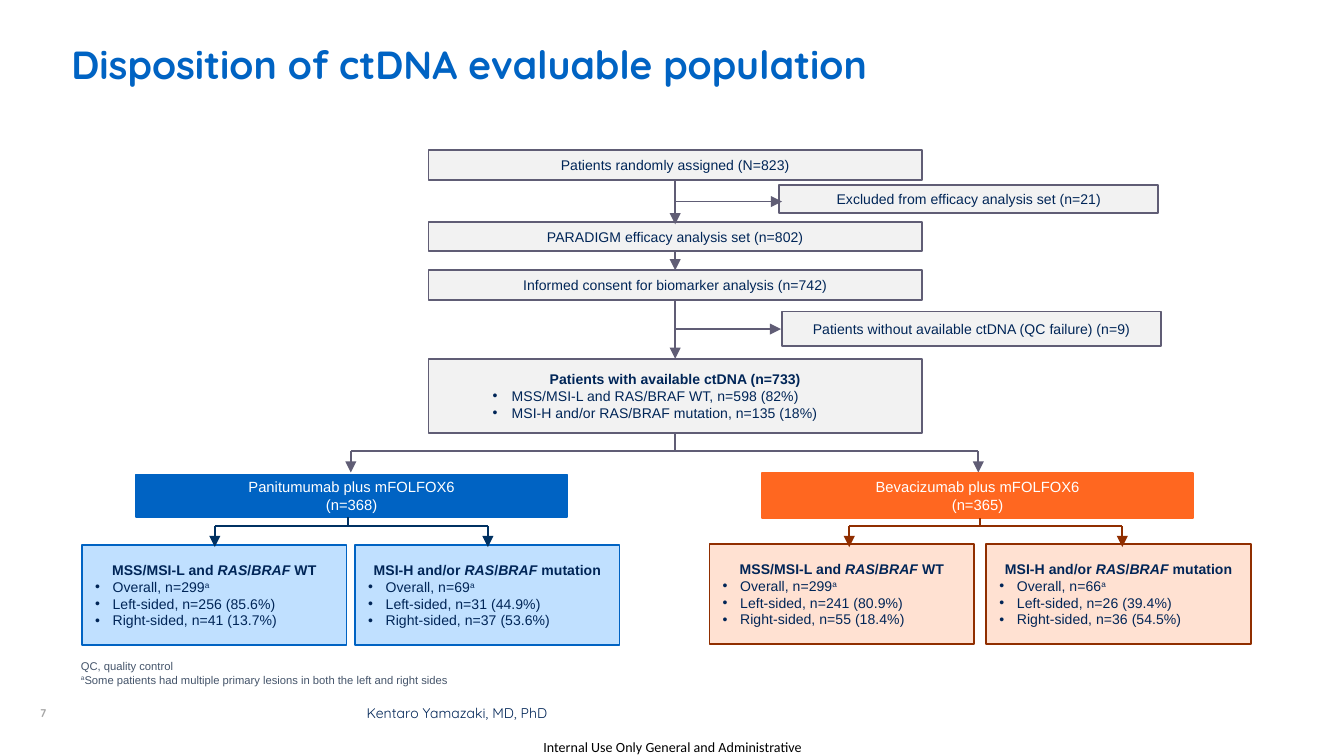
"""Build the patient disposition flow chart slide."""
from lxml import etree
from pptx import Presentation, util as u
from pptx.dml.color import RGBColor
from pptx.enum import shapes, text
from pptx.oxml.ns import qn

THEME = dict(
    head="Quicksand", body="Arial", foot="Calibri",
    title_size=21, text_size=7.5, arm_size=7.9, note_size=6,
    blue="0063C3", navy="002557", grey="605D75", pale="F2F2F2", white="FFFFFF",
    black="000000", note="44546A", number="A6A6A6",
    blue_pale="C0E0FF", blue_dark="003162",
    orange="FF6720", orange_pale="FFE1D2", orange_dark="902E00",
)
C, L = text.PP_ALIGN.CENTER, text.PP_ALIGN.LEFT
TOP, MID, BOTTOM = text.MSO_ANCHOR.TOP, text.MSO_ANCHOR.MIDDLE, text.MSO_ANCHOR.BOTTOM

TITLE = "Disposition of ctDNA evaluable population"
AUTHOR = "Kentaro Yamazaki, MD, PhD"
NOTES = ["QC, quality control",
         "^a^Some patients had multiple primary lesions in both the left and right sides"]
STEPS = [
    ("Patients randomly assigned (N=823)", (8.1, 2.84, 9.32, 0.56)),
    ("PARADIGM efficacy analysis set (n=802)", (8.1, 4.19, 9.32, 0.56)),
    ("Informed consent for biomarker analysis (n=742)", (8.1, 5.11, 9.32, 0.56)),
    ("Excluded from efficacy analysis set (n=21)", (14.73, 3.5, 7.16, 0.53)),
    ("Patients without available ctDNA (QC failure) (n=9)", (14.78, 5.89, 7.16, 0.66)),
]
AVAILABLE = ("Patients with available ctDNA (n=733)",
             ["MSS/MSI-L and RAS/BRAF WT, n=598 (82%)",
              "MSI-H and/or RAS/BRAF mutation, n=135 (18%)"])
AVAILABLE_AT = (8.1, 6.78, 9.32, 1.4)
CENTRE = 12.76
DOWN = [(3.42, 4.24), (4.77, 5.11), (5.67, 6.78)]
ACROSS = [(3.81, 14.78), (6.22, 14.76)]
GROUPS = ["MSS/MSI-L and *RAS*/*BRAF* WT", "MSI-H and/or *RAS*/*BRAF* mutation"]
ARMS = [
    dict(name="Panitumumab plus mFOLFOX6", n="(n=368)", at=(2.57, 8.97, 8.15, 0.81),
         colour="blue", pale="blue_pale", edge="blue", line="blue_dark",
         stem=6.58, drops=(4.06, 9.22), top=10.31, lefts=(1.55, 6.71),
         counts=[("299", "256 (85.6%)", "41 (13.7%)"), ("69", "31 (44.9%)", "37 (53.6%)")]),
    dict(name="Bevacizumab plus mFOLFOX6", n="(n=365)", at=(14.4, 8.94, 8.15, 0.86),
         colour="orange", pale="orange_pale", edge="orange_dark", line="orange_dark",
         stem=18.52, drops=(16.05, 21.21), top=10.29, lefts=(13.41, 18.64),
         counts=[("299", "241 (80.9%)", "55 (18.4%)"), ("66", "26 (39.4%)", "36 (54.5%)")]),
]


def rgb(key):
    return RGBColor.from_string(THEME[key])


def place(sp, at):
    sp.left, sp.top, sp.width, sp.height = map(u.Cm, at)


def write(tf, lines, size="text_size", colour="navy", font="body", bold=False, align=L,
          anchor=MID, inset=(0.25, 0.13), indent=None, spacing=None, add=False):
    """Write lines, where *x* is italic and ^x^ is superscript."""
    tf.word_wrap, tf.vertical_anchor, tf.auto_size = True, anchor, text.MSO_AUTO_SIZE.NONE
    tf.margin_left = tf.margin_right = u.Cm(inset[0])
    tf.margin_top = tf.margin_bottom = u.Cm(inset[1])
    for i, line in enumerate(lines):
        p = tf.add_paragraph() if add or i else tf.paragraphs[0]
        p.alignment, p.space_before = align, u.Pt(0)
        if spacing:
            p.line_spacing = u.Pt(spacing)
        pPr = p._p.get_or_add_pPr()
        left, hang = indent or (0, 0)
        pPr.set("marL", str(u.Cm(left)))
        pPr.set("indent", str(-u.Cm(hang)))
        if indent:
            etree.SubElement(pPr, qn("a:buFont")).set("typeface", "Arial")
            etree.SubElement(pPr, qn("a:buChar")).set("char", "•")
        else:
            etree.SubElement(pPr, qn("a:buNone"))
        for j, part in enumerate(line.split("*")):
            for k, piece in enumerate(part.split("^")):
                if not piece:
                    continue
                r = p.add_run()
                r.text = piece
                r.font.name, r.font.size = THEME[font], u.Pt(THEME[size])
                r.font.bold, r.font.italic = bold, j % 2 == 1
                r.font.color.rgb = rgb(colour)
                if k % 2:
                    r.font._element.set("baseline", "30000")


def box(s, at, fill="pale", edge="grey"):
    sp = s.shapes.add_shape(shapes.MSO_SHAPE.RECTANGLE, *map(u.Cm, at))
    sp.shadow.inherit = False
    sp.fill.solid()
    sp.fill.fore_color.rgb = rgb(fill)
    sp.line.color.rgb = rgb(edge)
    sp.line.width = u.Pt(1)
    return sp.text_frame


def label(s, at, lines, **fmt):
    write(s.shapes.add_textbox(*map(u.Cm, at)).text_frame, lines, **fmt)


def line(s, x1, y1, x2, y2, colour="grey", arrow=False):
    cx = s.shapes.add_connector(shapes.MSO_CONNECTOR.STRAIGHT, *map(u.Cm, (x1, y1, x2, y2)))
    cx.line.color.rgb = rgb(colour)
    cx.line.width = u.Pt(1)
    if arrow:
        etree.SubElement(cx.line._get_or_add_ln(), qn("a:tailEnd")).set("type", "triangle")
    etree.SubElement(cx._element.spPr, qn("a:effectLst"))


def fork(s, stem, top, bar, drops, bottom, colour="grey"):
    line(s, stem, top, stem, bar, colour)
    line(s, drops[0], bar, drops[1], bar, colour)
    for x in drops:
        line(s, x, bar, x, bottom, colour, arrow=True)


def main():
    prs = Presentation()
    prs.slide_width, prs.slide_height = u.Cm(25.4), u.Cm(14.29)
    s = prs.slides.add_slide(prs.slide_layouts[1])
    title, author = s.placeholders
    place(title, (1.35, 0.76, 22.86, 1.27))
    write(title.text_frame, [TITLE], size="title_size", colour="blue", font="head",
          bold=True, anchor=TOP, inset=(0, 0))
    place(author, (6.93, 13.06, 12.19, 0.58))
    write(author.text_frame, [AUTHOR], font="head", anchor=BOTTOM, inset=(0, 0))

    for step, at in STEPS:
        write(box(s, at), [step], align=C)
    head, items = AVAILABLE
    tf = box(s, AVAILABLE_AT)
    write(tf, [head], bold=True, align=C)
    write(tf, items, indent=(1.32, 0.36), add=True)
    for y1, y2 in DOWN:
        line(s, CENTRE, y1, CENTRE, y2, arrow=True)
    for y, x in ACROSS:
        line(s, CENTRE, y, x, y, arrow=True)
    fork(s, CENTRE, 8.18, 8.53, (6.63, 18.49), 8.93)

    for arm in ARMS:
        write(box(s, arm["at"], arm["colour"], arm["colour"]), [arm["name"], arm["n"]],
              size="arm_size", colour="white", align=C)
        for group, left, (overall, lhs, rhs) in zip(GROUPS, arm["lefts"], arm["counts"]):
            tf = box(s, (left, arm["top"], 5, 1.88), arm["pale"], arm["edge"])
            write(tf, [group], bold=True, align=C)
            write(tf, [f"Overall, n={overall}^a^", f"Left-sided, n={lhs}",
                       f"Right-sided, n={rhs}"], indent=(0.33, 0.33), add=True)
        fork(s, arm["stem"], arm["at"][1] + arm["at"][3], 9.95, arm["drops"], 10.34,
             arm["line"])

    label(s, (1.35, 12.37, 9.19, 0.69), NOTES, size="note_size", colour="note",
          anchor=TOP, inset=(0.18, 0.1))
    label(s, (0.76, 13.18, 0.86, 0.43), ["7"], size="note_size", colour="number",
          font="head", bold=True, anchor=BOTTOM, inset=(0, 0))
    label(s, (9.93, 13.77, 5.56, 0.48), ["Internal Use Only General and Administrative"],
          colour="black", font="foot", align=C, inset=(0, 0), spacing=15.2)
    prs.save("out.pptx")


if __name__ == "__main__":
    main()
